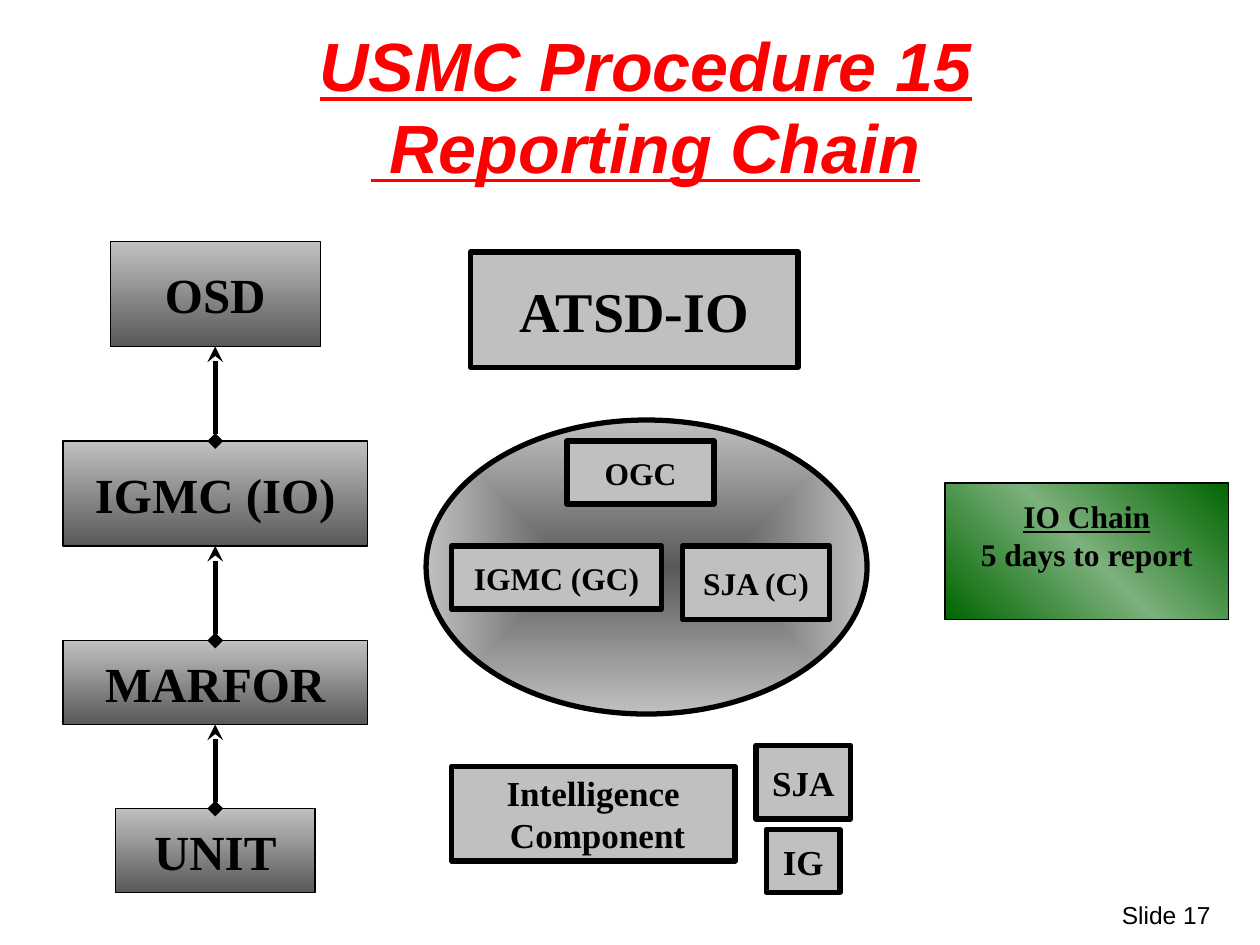
"""Build the Procedure 15 reporting chain slide."""
import pptx
import pptx.dml.color
import pptx.enum.shapes
import pptx.enum.text
import pptx.oxml
import pptx.oxml.ns
import pptx.util

Pt = pptx.util.Pt
RGBColor = pptx.dml.color.RGBColor
SHAPE = pptx.enum.shapes.MSO_SHAPE
ALIGN = pptx.enum.text.PP_ALIGN
ANCHOR = pptx.enum.text.MSO_ANCHOR
BLACK = RGBColor(0, 0, 0)
RED = RGBColor(0xFF, 0, 0)
SILVER = RGBColor(0xC0, 0xC0, 0xC0)
GRAY = RGBColor(0x59, 0x59, 0x59)
GREEN = RGBColor(0, 0x66, 0)
MINT = RGBColor(0x7C, 0xB0, 0x7C)
NS = pptx.oxml.ns.nsdecls("a")
DOWN = '<a:lin ang="5400000" scaled="1"/>'
RISE = '<a:lin ang="18900000" scaled="1"/>'
CORE = '<a:path path="shape"><a:fillToRect l="50000" t="50000" r="50000" b="50000"/></a:path>'


class Chart:
    def __init__(self, slide, face, head):
        self.slide = slide
        self.face = face
        self.head = head

    def label(self, shape, lines, size, face, color=BLACK, bold=True, wrap=False):
        frame = shape.text_frame
        frame.text = "\n".join(lines)
        frame.word_wrap = wrap
        frame.vertical_anchor = ANCHOR.MIDDLE
        for para in frame.paragraphs:
            para.alignment = ALIGN.CENTER
            for run in para.runs:
                run.font.name = face
                run.font.size = Pt(size)
                run.font.bold = bold
                run.font.color.rgb = color
        return frame

    def text(self, box, lines, size, color=BLACK, bold=False):
        shape = self.slide.shapes.add_textbox(*map(Pt, box))
        return self.label(shape, lines, size, self.head, color, bold, True)

    def block(self, box, lines=(), size=18, line=3, kind=SHAPE.RECTANGLE):
        shape = self.slide.shapes.add_shape(kind, *map(Pt, box))
        shape.shadow.inherit = False
        shape.fill.solid()
        shape.fill.fore_color.rgb = SILVER
        shape.line.color.rgb = BLACK
        shape.line.width = Pt(line)
        if lines:
            self.label(shape, lines, size, self.face)
        return shape

    def blend(self, shape, colors, way):
        step = 100000 // (len(colors) - 1)
        stops = "".join(
            f'<a:gs pos="{i * step}"><a:srgbClr val="{color}"/></a:gs>'
            for i, color in enumerate(colors)
        )
        fill = pptx.oxml.parse_xml(
            f'<a:gradFill {NS} rotWithShape="1"><a:gsLst>{stops}</a:gsLst>{way}</a:gradFill>'
        )
        props = shape._element.spPr
        props.replace(props.find(pptx.oxml.ns.qn("a:solidFill")), fill)

    def arrow(self, low, high):
        line = self.slide.shapes.add_connector(
            pptx.enum.shapes.MSO_CONNECTOR.STRAIGHT, 0, 0, 0, 0
        )
        line.begin_connect(low, 0)
        line.end_connect(high, 2)
        line.line.color.rgb = BLACK
        line.line.width = Pt(3)
        props = line._element.spPr
        edge = props.find(pptx.oxml.ns.qn("a:ln"))
        for tag in ('headEnd type="diamond"', 'tailEnd type="stealth"'):
            edge.append(pptx.oxml.parse_xml(f"<a:{tag} {NS}/>"))
        props.append(pptx.oxml.parse_xml(f"<a:effectLst {NS}/>"))


def main():
    deck = pptx.Presentation()
    deck.slide_width, deck.slide_height = Pt(720), Pt(540)
    slide = deck.slides.add_slide(deck.slide_layouts[6])
    chart = Chart(slide, "Times New Roman", "Arial")

    foot = chart.text((634, 511, 86, 29), ["Slide 17"], 14)
    foot.paragraphs[0].alignment = ALIGN.LEFT
    foot.vertical_anchor = ANCHOR.TOP

    oval = chart.block((243.5, 240, 252, 168), kind=SHAPE.OVAL)
    chart.blend(oval, (GRAY, SILVER), CORE)

    title = chart.text(
        (174, 18, 390, 84), ["USMC Procedure 15", " Reporting Chain"], 39, RED, True
    )
    for para in title.paragraphs:
        for run in para.runs:
            run.font.italic = True
            run.font.underline = True

    note = chart.block((540, 276, 162, 78), ["IO Chain", "5 days to report"], 18, 0.75)
    chart.blend(note, (GREEN, MINT, GREEN), RISE)
    note.text_frame.vertical_anchor = ANCHOR.TOP
    note.text_frame.margin_top = Pt(8)
    note.text_frame.paragraphs[0].runs[0].font.underline = True

    for box, lines, size in (
        ((269, 144, 187, 66), ["ATSD-IO"], 32),
        ((324, 252, 84, 36), ["OGC"], 18),
        ((258, 312, 120, 36), ["IGMC (GC)"], 18),
        ((390, 312, 84, 42), ["SJA (C)"], 18),
        ((258, 438, 162, 54), ["Intelligence", " Component"], 20),
        ((432, 426, 54, 42), ["SJA"], 20),
        ((438, 474, 42, 36), ["IG"], 20),
    ):
        chart.block(box, lines, size)

    mid = 123
    chain = []
    for name, top, wide, high in (
        ("OSD", 138, 120, 60),
        ("IGMC (IO)", 252, 174, 60),
        ("MARFOR", 366, 174, 48),
        ("UNIT", 462, 114, 48),
    ):
        link = chart.block((mid - wide / 2, top, wide, high), [name], 28, 0.75)
        chart.blend(link, (SILVER, GRAY), DOWN)
        chain.append(link)
    for high, low in zip(chain, chain[1:]):
        chart.arrow(low, high)

    deck.save("out.pptx")


if __name__ == "__main__":
    main()
